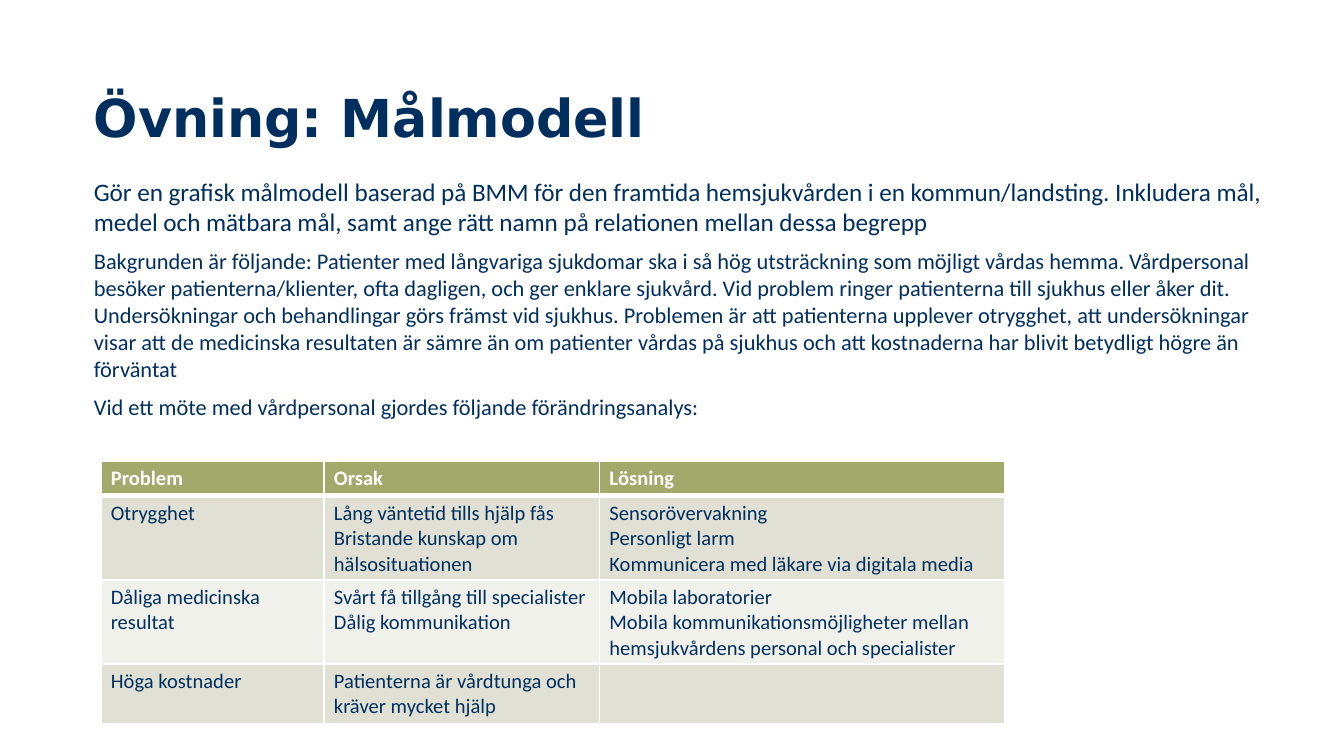
from lxml.etree import SubElement
from pptx import Presentation
from pptx.dml.color import RGBColor as RGB
from pptx.enum.text import MSO_ANCHOR as Anchor
from pptx.oxml.ns import qn
from pptx.util import Inches, Pt

NAVY = RGB(0x00, 0x2F, 0x5F)
WHITE = RGB(0xFF, 0xFF, 0xFF)
OLIVE = RGB(0xA3, 0xA8, 0x6B)
SAND = RGB(0xE0, 0xE1, 0xD4)
PALE = RGB(0xF0, 0xF1, 0xEB)

TITLE = "Övning: Målmodell"
BODY = [
    ("Gör en grafisk målmodell baserad på BMM för den framtida hemsjukvården i en kommun/landsting. "
     "Inkludera mål, medel och mätbara mål, samt ange rätt namn på relationen mellan dessa begrepp", 13.5),
    ("Bakgrunden är följande: Patienter med långvariga sjukdomar ska i så hög utsträckning som möjligt "
     "vårdas hemma. Vårdpersonal besöker patienterna/klienter, ofta dagligen, och ger enklare sjukvård. "
     "Vid problem ringer patienterna till sjukhus eller åker dit. Undersökningar och behandlingar görs "
     "främst vid sjukhus. Problemen är att patienterna upplever otrygghet, att undersökningar visar att "
     "de medicinska resultaten är sämre än om patienter vårdas på sjukhus och att kostnaderna har blivit "
     "betydligt högre än förväntat", 12),
    ("Vid ett möte med vårdpersonal gjordes följande förändringsanalys:", 12),
]
ROWS = [
    ["Problem", "Orsak", "Lösning"],
    ["Otrygghet",
     "Lång väntetid tills hjälp fås\nBristande kunskap om hälsosituationen",
     "Sensorövervakning\nPersonligt larm\nKommunicera med läkare via digitala media"],
    ["Dåliga medicinska resultat",
     "Svårt få tillgång till specialister\nDålig kommunikation",
     "Mobila laboratorier\nMobila kommunikationsmöjligheter mellan hemsjukvårdens personal och specialister"],
    ["Höga kostnader", "Patienterna är vårdtunga och kräver mycket hjälp", ""],
]
WIDTHS = [1.66, 2.05, 3.02]
HEIGHTS = [0.25, 0.6, 0.6, 0.42]
FILLS = [OLIVE, SAND, PALE, SAND]
PAD = Inches(0.15) // 4


def style(para, size, color=NAVY, name="Calibri", bold=False):
    font = para.font
    font.name, font.size, font.bold = name, Pt(size), bold
    font.color.rgb = color


def border(cell, side, width):
    line = SubElement(cell._tc.get_or_add_tcPr(), qn("a:" + side), w=str(Pt(width)))
    fill = SubElement(line, qn("a:solidFill"))
    SubElement(fill, qn("a:srgbClr"), val=str(WHITE))


prs = Presentation()
prs.slide_width = Inches(10)
prs.slide_height = prs.slide_width * 9 // 16
slide = prs.slides.add_slide(prs.slide_layouts[6])

title = slide.shapes.add_textbox(Inches(0.6), Inches(0.4), Inches(6.85), Inches(0.94)).text_frame
title.word_wrap = True
title.vertical_anchor = Anchor.MIDDLE
title.text = TITLE
style(title.paragraphs[0], 28, name="DejaVu Sans", bold=True)

body = slide.shapes.add_textbox(Inches(0.6), Inches(1.26), Inches(9.02), Inches(2.31)).text_frame
body.word_wrap = True
body.text = "\n".join(text for text, size in BODY)
for i, (para, (text, size)) in enumerate(zip(body.paragraphs, BODY)):
    style(para, size)
    if i:
        para.space_before = Pt(size / 2)

table = slide.shapes.add_table(
    len(ROWS), len(WIDTHS), Inches(0.75), Inches(3.43),
    Inches(sum(WIDTHS)), Inches(sum(HEIGHTS))).table
for col, width in zip(table.columns, WIDTHS):
    col.width = Inches(width)
for r, (texts, height, fill) in enumerate(zip(ROWS, HEIGHTS, FILLS)):
    table.rows[r].height = Inches(height)
    head = r == 0
    for c, text in enumerate(texts):
        cell = table.cell(r, c)
        cell.margin_left = cell.margin_right = PAD * 2
        cell.margin_top = cell.margin_bottom = PAD
        cell.text = text
        for para in cell.text_frame.paragraphs:
            style(para, 11, WHITE if head else NAVY, bold=head)
        border(cell, "lnL", 1)
        border(cell, "lnR", 1)
        border(cell, "lnT", 3 if r == 1 else 1)
        border(cell, "lnB", 3 if head else 1)
        cell.fill.solid()
        cell.fill.fore_color.rgb = fill

prs.save("out.pptx")
